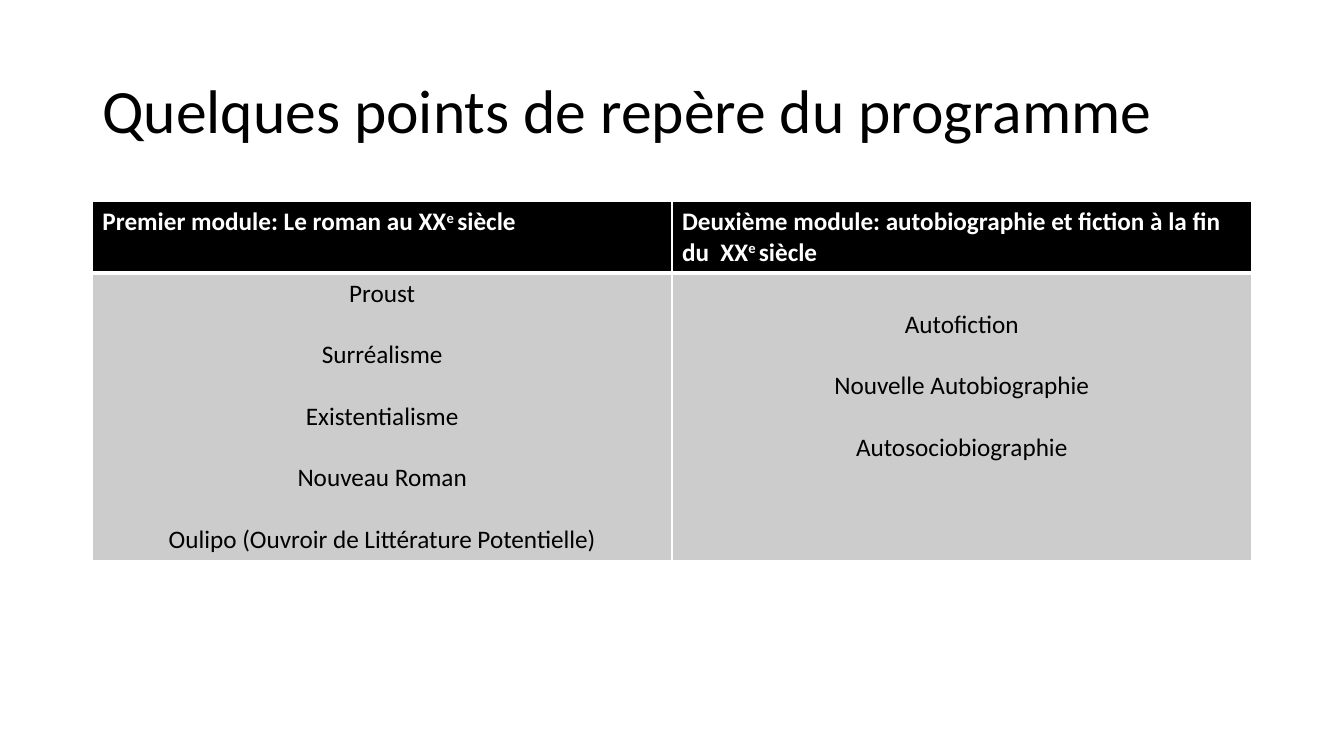
from lxml import etree
from pptx import Presentation
from pptx.dml.color import RGBColor
from pptx.enum import text
from pptx.oxml import ns
from pptx.util import Pt

BLACK = RGBColor(0x00, 0x00, 0x00)
WHITE = RGBColor(0xFF, 0xFF, 0xFF)
GREY = RGBColor(0xCC, 0xCC, 0xCC)

LEFT, WIDTH = 66, 828
LINE = 22  # height of one line of table text
HEADER_HEIGHT, BODY_HEIGHT = 50, 205

# Each module: header before and after the superscript, topics, empty lines on top
MODULES = [
    ("Premier module: Le roman au XX", "siècle",
     ["Proust", "Surréalisme", "Existentialisme", "Nouveau Roman",
      "Oulipo (Ouvroir de Littérature Potentielle)"], 0),
    ("Deuxième module: autobiographie et fiction à la fin du  XX", "siècle",
     ["Autofiction", "Nouvelle Autobiographie", "Autosociobiographie"], 1),
]


class SlideBuilder:
    def __init__(self, s, font="Calibri", size=18):
        self.s, self.font, self.size = s, font, size

    def style(self, r, color, size=None, bold=False):
        f = r.font
        f.name, f.size, f.bold = self.font, Pt(size or self.size), bold
        f.color.rgb = color

    def title(self, content, left, top, width, height):
        sp = self.s.shapes.title
        sp.left, sp.top, sp.width, sp.height = map(Pt, (left, top, width, height))
        tf = sp.text_frame
        tf.text = content
        tf.auto_size = text.MSO_AUTO_SIZE.NONE
        tf.vertical_anchor = text.MSO_ANCHOR.MIDDLE
        p = tf.paragraphs[0]
        p.alignment = text.PP_ALIGN.LEFT
        p.line_spacing = 0.9
        self.style(p.runs[0], BLACK, 44)

    def table(self, left, top, width, heights, columns):
        table = self.s.shapes.add_table(
            len(heights), columns, Pt(left), Pt(top), Pt(width), Pt(sum(heights))).table
        for row, height in zip(table.rows, heights):
            row.height = Pt(height)
        return table

    def fill(self, cell, color, top, bottom):
        cell.fill.solid()
        cell.fill.fore_color.rgb = color
        tcPr = cell._tc.get_or_add_tcPr()
        borders = [("lnL", 1), ("lnR", 1), ("lnT", top), ("lnB", bottom)]
        for i, (side, weight) in enumerate(borders):
            ln = etree.Element(ns.qn(f"a:{side}"), w=str(Pt(weight)))
            paint = etree.SubElement(ln, ns.qn("a:solidFill"))
            etree.SubElement(paint, ns.qn("a:srgbClr"), val=str(WHITE))
            tcPr.insert(i, ln)

    def header(self, cell, before, after):
        self.fill(cell, BLACK, 1, 3)
        p = cell.text_frame.paragraphs[0]
        for content, baseline in ((before, 0), ("e ", 30000), (after, 0)):
            r = p.add_run()
            r.text = content
            self.style(r, WHITE, bold=True)
            if baseline:
                r._r.get_or_add_rPr().set("baseline", str(baseline))

    def topics(self, cell, names, offset):
        self.fill(cell, GREY, 3, 1)
        cell.margin_top = Pt(3.6 + offset * LINE)
        tf = cell.text_frame
        tf.text = "\n".join(names)
        for i, p in enumerate(tf.paragraphs):
            p.alignment = text.PP_ALIGN.CENTER
            p.space_before = Pt(LINE if i else 0)
            self.style(p.runs[0], BLACK)


def main():
    prs = Presentation()
    prs.slide_width, prs.slide_height = Pt(960), Pt(540)
    b = SlideBuilder(prs.slides.add_slide(prs.slide_layouts[5]))

    # Title
    b.title("Quelques points de repère du programme", LEFT, 28.75, WIDTH, 104.4)

    # Programme table, one column per module
    table = b.table(LEFT, 144, WIDTH, (HEADER_HEIGHT, BODY_HEIGHT), len(MODULES))
    for col, (before, after, names, offset) in enumerate(MODULES):
        b.header(table.cell(0, col), before, after)
        b.topics(table.cell(1, col), names, offset)

    prs.save("out.pptx")


if __name__ == "__main__":
    main()
